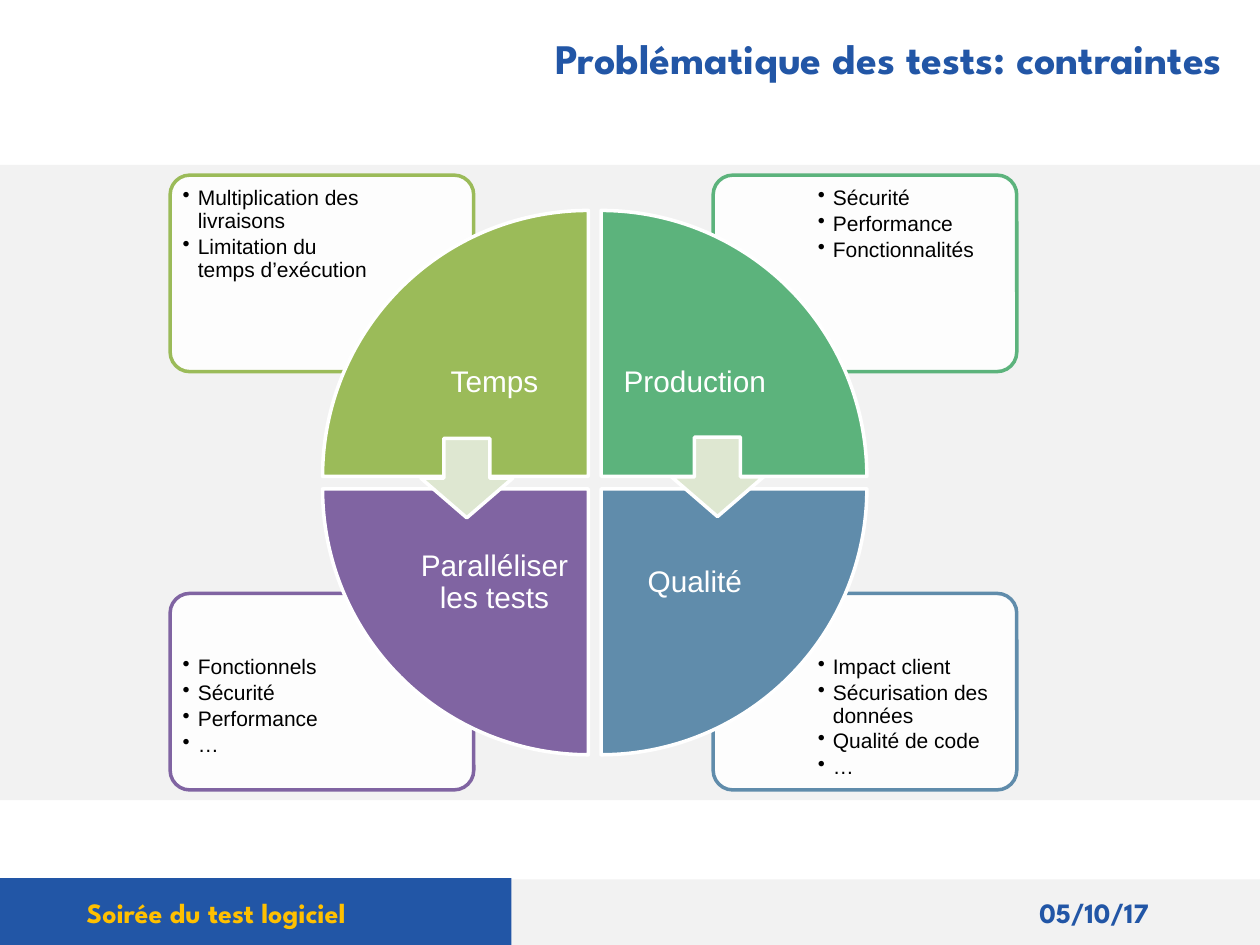
"""Build the slide on test constraints: four quadrants with their detail boxes."""
from lxml import etree
from pptx import Presentation
from pptx import util as u
from pptx.dml.color import RGBColor
from pptx.enum import shapes, text
from pptx.oxml.ns import qn

COLORS = {
    "blue": "2256A6", "gold": "FFC000", "grey": "F2F2F2", "white": "FFFFFF", "black": "000000",
    "green": "9BBB59", "emerald": "5CB37C", "steel": "608CAB", "purple": "8064A2", "pale": "DEE7D1",
}
TITLE = "Problématique des tests: contraintes"
FOOTERS = [("Soirée du test logiciel", "gold", 0.59, 4.96), ("05/10/17", "blue", 8.15, 1.85)]
BANDS = [("grey", 0, 6.98, 10, 0.52), ("blue", 0, 6.97, 4.06, 0.53), ("grey", -0.01, 1.31, 10.01, 5.04)]
QUADRANTS = [
    (1, 1, "Qualité", "steel", 180, ["Impact client", "Sécurisation des données", "Qualité de code", "…"]),
    (0, 1, "Paralléliser les tests", "purple", 270, ["Fonctionnels", "Sécurité", "Performance", "…"]),
    (1, 0, "Production", "emerald", 90, ["Sécurité", "Performance", "Fonctionnalités"]),
    (0, 0, "Temps", "green", 0, ["Multiplication des livraisons", "Limitation du temps d’exécution"]),
]
ARROWS = [(3.34, 3.48), (5.33, 3.47)]

BOX_LEFT, BOX_TOP, BOX_STEP_X, BOX_STEP_Y = 1.35, 1.39, 4.31, 3.32
BOX_WIDTH, BOX_HEIGHT = 2.41, 1.56
LIST_WIDTH, LIST_HEIGHT, LIST_GAP = 1.62, 1.1, 0.03
WEDGE_LEFT, WEDGE_TOP, WEDGE_SIZE, WEDGE_STEP = 2.56, 1.67, 2.11, 2.21
LABEL_SIZE = 1.49


def rgb(name):
    return RGBColor.from_string(COLORS[name])


def add_shape(slide, kind, left, top, width, height, fill, line=None, alpha=None):
    shape = slide.shapes.add_shape(kind, *map(u.Inches, (left, top, width, height)))
    shape.shadow.inherit = False
    shape.fill.solid()
    shape.fill.fore_color.rgb = rgb(fill)
    if alpha:
        color = shape.fill._xPr.find(f".//{qn('a:srgbClr')}")
        etree.SubElement(color, qn("a:alpha"), val=str(alpha * 1000))
    if line:
        shape.line.color.rgb = rgb(line)
        shape.line.width = u.Pt(2)
    else:
        shape.line.fill.background()
    return shape


def write(shape, lines, size, color, font="Arial", bold=False, align="LEFT", anchor="TOP",
          insets=(0.1, 0.05), spacing=1.0, after=0, bullet=False):
    frame = shape.text_frame
    frame.word_wrap = True
    frame.auto_size = text.MSO_AUTO_SIZE.NONE
    frame.vertical_anchor = text.MSO_ANCHOR[anchor]
    frame.margin_left = frame.margin_right = u.Inches(insets[0])
    frame.margin_top = frame.margin_bottom = u.Inches(insets[1])
    frame.text = "\n".join(lines)
    for paragraph in frame.paragraphs:
        paragraph.alignment = text.PP_ALIGN[align]
        paragraph.line_spacing = spacing
        paragraph.space_after = u.Pt(after)
        if bullet:
            properties = paragraph._p.get_or_add_pPr()
            properties.set("marL", str(u.Inches(0.12)))
            properties.set("indent", str(u.Inches(-0.12)))
            etree.SubElement(properties, qn("a:buChar"), char="•")
        run_font = paragraph.runs[0].font
        run_font.name, run_font.size, run_font.bold = font, u.Pt(size), bold
        run_font.color.rgb = rgb(color)


def add_text(slide, left, top, width, height, lines, **style):
    write(slide.shapes.add_textbox(*map(u.Inches, (left, top, width, height))), lines, **style)


def add_detail_box(slide, column, row, color, items):
    left, top = BOX_LEFT + column * BOX_STEP_X, BOX_TOP + row * BOX_STEP_Y
    box = add_shape(slide, shapes.MSO_SHAPE.ROUNDED_RECTANGLE, left, top, BOX_WIDTH, BOX_HEIGHT,
                    "white", color, alpha=90)
    box.adjustments[0] = 0.1
    list_left = left + (BOX_WIDTH - LIST_WIDTH - LIST_GAP if column else LIST_GAP)
    list_top = top + (BOX_HEIGHT - LIST_HEIGHT - LIST_GAP if row else LIST_GAP)
    add_text(slide, list_left, list_top, LIST_WIDTH, LIST_HEIGHT, items, size=12, color="black",
             insets=(0.07, 0.07), spacing=0.9, after=1.8, bullet=True)


def add_wedge(slide, column, row, label, color, rotation):
    left, top = WEDGE_LEFT + column * WEDGE_STEP, WEDGE_TOP + row * WEDGE_STEP
    wedge = add_shape(slide, shapes.MSO_SHAPE.PIE_WEDGE, left, top, WEDGE_SIZE, WEDGE_SIZE, color, "white")
    wedge.rotation = rotation
    inset = WEDGE_SIZE - LABEL_SIZE
    add_text(slide, left + (1 - column) * inset, top + (1 - row) * inset, LABEL_SIZE, LABEL_SIZE,
             [label], size=17, color="white", align="CENTER", anchor="MIDDLE",
             insets=(0.13, 0.13), spacing=0.9)


def main():
    presentation = Presentation()
    presentation.slide_width, presentation.slide_height = u.Inches(10), u.Inches(7.5)
    slide = presentation.slides.add_slide(presentation.slide_layouts[5])

    title = slide.shapes.title
    title.left, title.top, title.width, title.height = map(u.Inches, (3.55, 0.21, 6.25, 0.47))
    write(title, [TITLE], size=24, color="blue", font="League Spartan", bold=True, align="RIGHT")

    for color, *place in BANDS:
        add_shape(slide, shapes.MSO_SHAPE.RECTANGLE, *place, color)
    for words, color, left, width in FOOTERS:
        add_text(slide, left, 7.06, width, 0.37, [words], size=16, color=color,
                 font="League Spartan", bold=True)
    for column, row, label, color, rotation, items in QUADRANTS:
        add_detail_box(slide, column, row, color, items)
    for column, row, label, color, rotation, items in QUADRANTS:
        add_wedge(slide, column, row, label, color, rotation)
    for left, top in ARROWS:
        add_shape(slide, shapes.MSO_SHAPE.DOWN_ARROW, left, top, 0.73, 0.63, "pale", "white")

    presentation.save("out.pptx")


if __name__ == "__main__":
    main()
